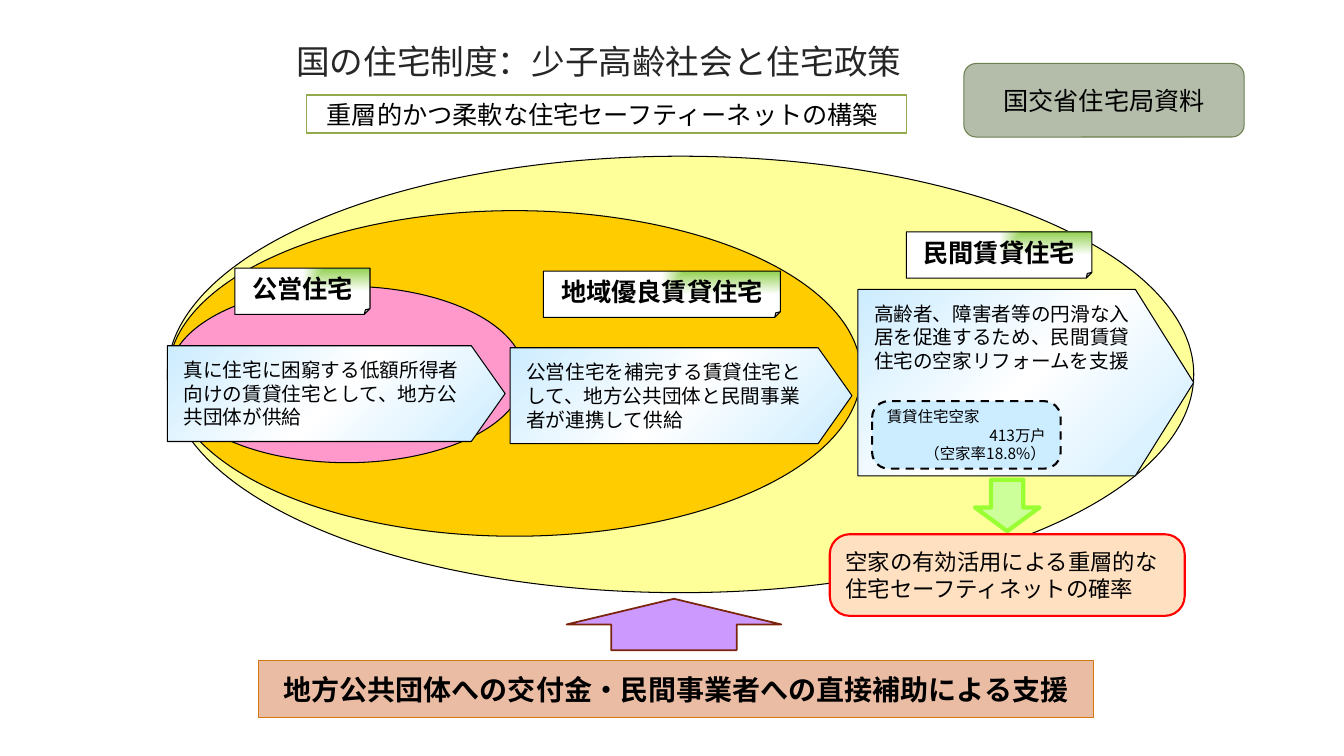
from dataclasses import dataclass
from typing import Optional

from lxml import etree
from pptx import Presentation
from pptx.dml.color import RGBColor
from pptx.enum.dml import MSO_LINE
from pptx.enum.shapes import MSO_SHAPE
from pptx.enum.text import MSO_ANCHOR, PP_ALIGN
from pptx.oxml.ns import qn
from pptx.util import Inches, Pt

RECTANGLE, ROUNDED = MSO_SHAPE.RECTANGLE, MSO_SHAPE.ROUNDED_RECTANGLE
ELLIPSE, PENTAGON, FOLDED = MSO_SHAPE.OVAL, MSO_SHAPE.PENTAGON, MSO_SHAPE.FOLDED_CORNER
UP_ARROW, DOWN_ARROW = MSO_SHAPE.UP_ARROW, MSO_SHAPE.DOWN_ARROW
LEFT, CENTER, RIGHT = PP_ALIGN.LEFT, PP_ALIGN.CENTER, PP_ALIGN.RIGHT
TOP, MIDDLE = MSO_ANCHOR.TOP, MSO_ANCHOR.MIDDLE
DASH = MSO_LINE.DASH


@dataclass(frozen=True)
class Theme:
    heading: str = "League Spartan"
    body: str = "Noto Sans CJK JP"
    label: str = "Arial"
    black: str = "000000"
    title: str = "262626"
    white: str = "FFFFFF"
    sky: str = "CCECFF"
    leaf: str = "92D050"
    title_size: float = 24
    support_size: float = 20
    label_size: float = 18
    vacancy_goal_size: float = 16
    body_size: float = 14
    vacancy_size: float = 11


THEME = Theme()


@dataclass(frozen=True)
class Text:
    lines: tuple
    size: float
    font: str = THEME.body
    color: str = THEME.black
    bold: bool = False
    alignments: tuple = (LEFT,)
    anchor: int = MIDDLE
    margins: tuple = (0.1, 0.05)
    wrap: bool = True
    spacing: Optional[float] = None


@dataclass(frozen=True)
class Gradient:
    stops: tuple
    angle: Optional[int] = None  # None fades out from the top right corner


@dataclass(frozen=True)
class Box:
    kind: int
    at: tuple
    fill: object
    line: str = THEME.black
    width: float = 0.75
    adjustments: tuple = ()
    dash: Optional[int] = None
    text: Optional[Text] = None


SKY_GRADIENT = Gradient(((0, THEME.sky), (50, THEME.white), (100, THEME.sky)), 45)
LEAF_GRADIENT = Gradient(((0, THEME.leaf), (100, THEME.white)))


def write_text(shape, text: Text) -> None:
    frame = shape.text_frame
    frame.text = "\n".join(text.lines)
    frame.word_wrap = text.wrap
    frame.vertical_anchor = text.anchor
    frame.margin_left = frame.margin_right = Inches(text.margins[0])
    frame.margin_top = frame.margin_bottom = Inches(text.margins[1])
    for index, paragraph in enumerate(frame.paragraphs):
        paragraph.alignment = text.alignments[min(index, len(text.alignments) - 1)]
        if text.spacing:
            paragraph.line_spacing = text.spacing
        for run in paragraph.runs:
            run.font.name = text.font
            run.font.size = Pt(text.size)
            run.font.bold = text.bold
            run.font.color.rgb = RGBColor.from_string(text.color)
            east_asian = etree.SubElement(run.font._element, qn("a:ea"))
            east_asian.set("typeface", text.font)


def fill_gradient(shape, gradient: Gradient) -> None:
    shape.fill.gradient()
    element = shape._element.spPr.find(qn("a:gradFill"))
    for child in list(element):
        element.remove(child)
    stops = etree.SubElement(element, qn("a:gsLst"))
    for position, color in gradient.stops:
        stop = etree.SubElement(stops, qn("a:gs"), pos=str(position * 1000))
        etree.SubElement(stop, qn("a:srgbClr"), val=color)
    if gradient.angle is None:
        corner = etree.SubElement(element, qn("a:path"), path="rect")
        etree.SubElement(corner, qn("a:fillToRect"), l="100000", b="100000")
    else:
        etree.SubElement(element, qn("a:lin"), ang=str(gradient.angle * 60000), scaled="0")


def set_adjustments(shape, values: tuple) -> None:
    """Write the guides directly, since some presets list none in python-pptx."""
    guides = shape._element.spPr.find(qn("a:prstGeom")).find(qn("a:avLst"))
    for guide in list(guides):
        guides.remove(guide)
    names = ("adj",) if len(values) == 1 else ("adj1", "adj2")
    for name, value in zip(names, values):
        etree.SubElement(guides, qn("a:gd"), name=name, fmla=f"val {round(value * 100000)}")


def draw_box(slide, box: Box) -> None:
    shape = slide.shapes.add_shape(box.kind, *map(Inches, box.at))
    shape.shadow.inherit = False
    if box.adjustments:
        set_adjustments(shape, box.adjustments)
    if isinstance(box.fill, Gradient):
        fill_gradient(shape, box.fill)
    else:
        shape.fill.solid()
        shape.fill.fore_color.rgb = RGBColor.from_string(box.fill)
    shape.line.color.rgb = RGBColor.from_string(box.line)
    shape.line.width = Pt(box.width)
    if box.dash:
        shape.line.dash_style = box.dash
    if box.text:
        write_text(shape, box.text)


def housing_label(name: str, left: float, top: float, width: float) -> Box:
    text = Text((name,), THEME.label_size, THEME.label, bold=True, alignments=(CENTER,),
                margins=(0.16, 0.05), wrap=False)
    return Box(FOLDED, (left, top, width, 0.46), LEAF_GRADIENT, adjustments=(0.125,), text=text)


def housing_arrow(description: str, at: tuple, point: float = 0.353, anchor: int = MIDDLE) -> Box:
    text = Text((description,), THEME.body_size, anchor=anchor, margins=(0.16, 0.12))
    return Box(PENTAGON, at, SKY_GRADIENT, adjustments=(point,), text=text)


BOXES = (
    # Subtitle and support banner
    Box(RECTANGLE, (3.04, 0.94, 5.95, 0.38), THEME.white, "92AA4C", 1.25,
        text=Text(("重層的かつ柔軟な住宅セーフティーネットの構築",), THEME.label_size,
                  margins=(0.2, 0.02), wrap=False)),
    Box(RECTANGLE, (2.56, 6.55, 8.29, 0.57), "EBBCA4", "D47817",
        text=Text(("地方公共団体への交付金・民間事業者への直接補助による支援",), THEME.support_size,
                  bold=True, alignments=(CENTER,), margins=(0.1, 0.12))),
    # Nested layers of the safety net
    Box(ELLIPSE, (1.66, 1.55, 10.18, 4.33), "FFFF99"),
    Box(ELLIPSE, (1.67, 2.09, 6.87, 3.23), "FFCC00"),
    Box(ELLIPSE, (1.68, 2.84, 3.52, 1.75), "FF99CC"),
    # Housing types
    housing_arrow("真に住宅に困窮する低額所得者向けの賃貸住宅として、地方公共団体が供給",
                  (1.66, 3.43, 3.35, 0.95)),
    housing_label("公営住宅", 2.33, 2.66, 1.34),
    housing_label("地域優良賃貸住宅", 5.39, 2.69, 2.35),
    housing_label("民間賃貸住宅", 8.99, 2.3, 1.84),
    housing_arrow("公営住宅を補完する賃貸住宅として、地方公共団体と民間事業者が連携して供給",
                  (5.06, 3.45, 3.39, 0.95)),
    housing_arrow("高齢者、障害者等の円滑な入居を促進するため、民間賃貸住宅の空家リフォームを支援",
                  (8.51, 2.87, 3.33, 1.85), 0.313, TOP),
    # Vacant homes and their use
    Box(ROUNDED, (8.65, 3.98, 1.87, 0.67), THEME.sky, width=1.5, adjustments=(0.244,), dash=DASH,
        text=Text(("賃貸住宅空家", "413万戸", "（空家率18.8%）"), THEME.vacancy_size,
                  alignments=(LEFT, RIGHT), margins=(0.1, 0.01))),
    Box(UP_ARROW, (5.62, 5.94, 2.13, 0.51), "CC99FF", "7A240C", 1.25, (0.584, 0.5)),
    Box(ROUNDED, (8.23, 5.3, 3.52, 0.81), "FFE0C1", "FF0000", 1.5, (0.244,),
        text=Text(("空家の有効活用による重層的な住宅セーフティネットの確率",), THEME.vacancy_goal_size)),
    Box(DOWN_ARROW, (9.67, 4.76, 0.64, 0.51), "CCFF99", "99FF33", 3, (0.5, 0.462)),
    # Source of the material
    Box(ROUNDED, (9.56, 0.63, 2.78, 0.73), "B4BCAA", "6D804F",
        text=Text(("国交省住宅局資料",), THEME.label_size, THEME.heading, alignments=(CENTER,))),
)


def main() -> None:
    presentation = Presentation()
    presentation.slide_width, presentation.slide_height = Inches(13.33), Inches(7.5)
    slide = presentation.slides.add_slide(presentation.slide_layouts[6])
    # Title
    title = slide.shapes.add_textbox(*map(Inches, (2.84, 0.4, 9.75, 1.4)))
    write_text(title, Text(("国の住宅制度：少子高齢社会と住宅政策",), THEME.title_size, THEME.heading,
                           THEME.title, anchor=TOP, spacing=0.9))
    for box in BOXES:
        draw_box(slide, box)
    presentation.save("out.pptx")


if __name__ == "__main__":
    main()
